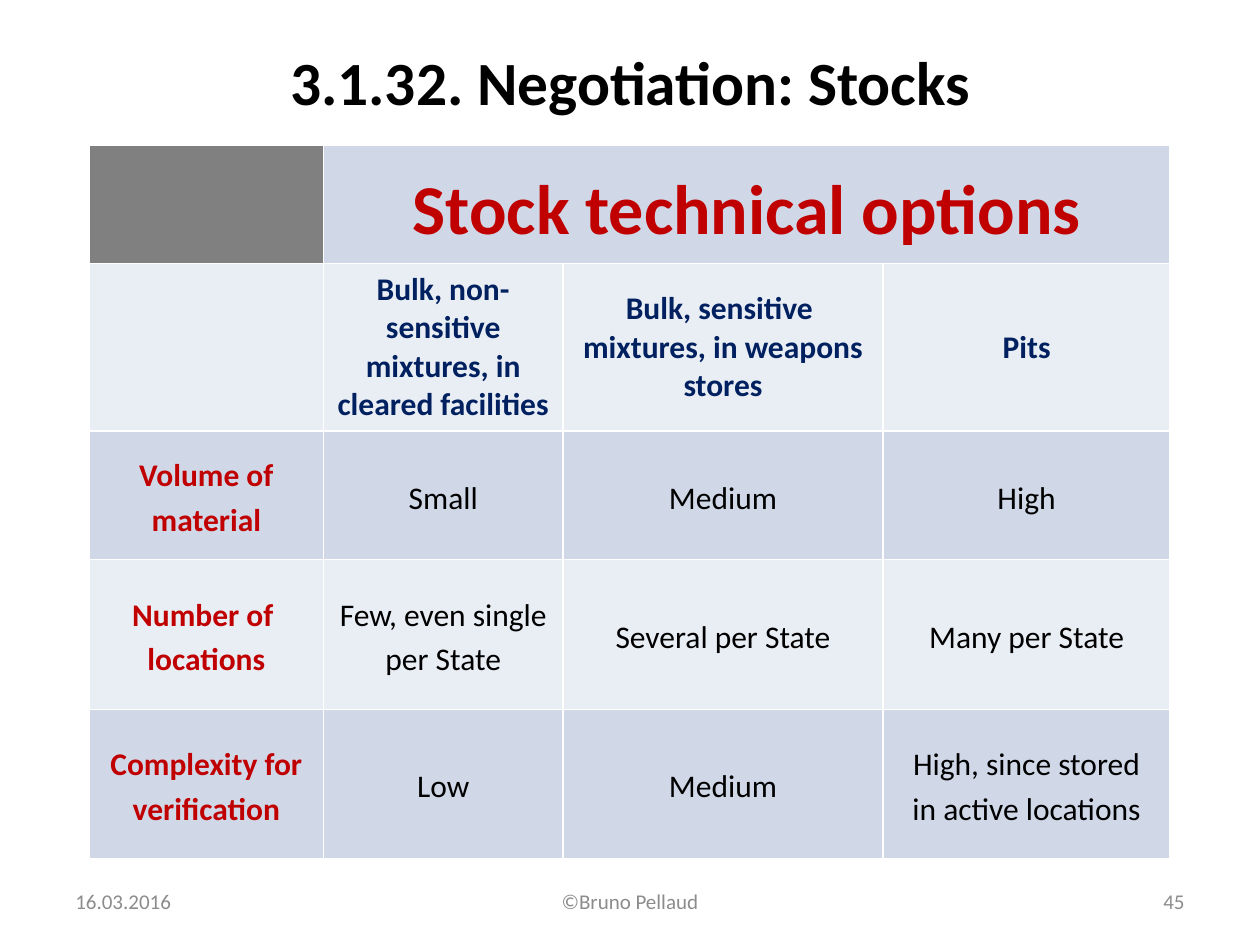
from lxml import etree
from pptx import Presentation
from pptx import util as u
from pptx.dml.color import RGBColor
from pptx.enum import text
from pptx.oxml import ns

ALIGN = text.PP_ALIGN
ANCHOR = text.MSO_ANCHOR


def paint(color_format, color):
    color_format.rgb = RGBColor.from_string(color)


def write(frame, content, size=18, color="000000", bold=False,
          align=ALIGN.CENTER, spacing=None, after=None):
    frame.word_wrap = True
    for index, line in enumerate(content.split("\n")):
        para = frame.paragraphs[0] if index == 0 else frame.add_paragraph()
        para.text = line
        para.alignment = align
        para.line_spacing = spacing
        para.space_after = after
        for span in para.runs:
            span.font.name = "Calibri"
            span.font.size = u.Pt(size)
            span.font.bold = bold
            paint(span.font.color, color)


deck = Presentation()
deck.slide_width = u.Cm(25.4)
deck.slide_height = u.Cm(19.05)
page = deck.slides.add_slide(deck.slide_layouts[6])

column_widths = [4.72, 4.83, 6.45, 5.79]
row_heights = [2.39, 3.38, 2.59, 3.02, 3.02]
rows = [
    ["", "Stock technical options", "", ""],
    ["", "Bulk, non-sensitive mixtures, in cleared facilities",
     "Bulk, sensitive \vmixtures, in weapons stores", "Pits"],
    ["Volume of\nmaterial", "Small", "Medium", "High"],
    ["Number of \nlocations", "Few, even single per State",
     "Several per State", "Many per State"],
    ["Complexity for\nverification", "Low", "Medium",
     "High, since stored\nin active locations"],
]

table = page.shapes.add_table(
    len(rows), len(column_widths), u.Cm(1.8), u.Cm(2.92),
    u.Cm(sum(column_widths)), u.Cm(sum(row_heights))).table
table.first_row = False
table.horz_banding = False
for column, width in zip(table.columns, column_widths):
    column.width = u.Cm(width)
for row, height in zip(table.rows, row_heights):
    row.height = u.Cm(height)
table.cell(0, 1).merge(table.cell(0, 3))

for r, labels in enumerate(rows):
    for c, label in enumerate(labels):
        cell = table.cell(r, c)
        cell.vertical_anchor = ANCHOR.MIDDLE
        cell.margin_left = cell.margin_right = u.Cm(0.18)
        cell.margin_top = cell.margin_bottom = 0
        cell.fill.solid()
        band = "E9EDF4" if r % 2 else "D0D8E8"
        paint(cell.fill.fore_color, "808080" if r == c == 0 else band)

        properties = cell._tc.get_or_add_tcPr()
        for index, side in enumerate(["lnL", "lnR", "lnT", "lnB"]):
            border = etree.Element(ns.qn(f"a:{side}"), w=str(u.Pt(1)))
            fill = etree.SubElement(border, ns.qn("a:solidFill"))
            etree.SubElement(fill, ns.qn("a:srgbClr"), val="FFFFFF")
            properties.insert(index, border)

        if not label:
            continue
        if r == 0:
            style = dict(size=40, color="C00000", bold=True, spacing=1.15)
        elif r == 1:
            style = dict(color="002060", bold=True)
        elif c == 0:
            style = dict(color="C00000", bold=True, spacing=1.15)
        else:
            style = dict(spacing=1.15)
            if c == 3 and r < 4:
                style["after"] = u.Pt(10)
        write(cell.text_frame, label, **style)

title = page.shapes.add_textbox(u.Cm(1.27), u.Cm(0.76), u.Cm(22.86), u.Cm(3.18))
write(title.text_frame, "3.1.32. Negotiation: Stocks", size=35.1, bold=True)

footers = [
    ("16.03.2016", 1.27, 5.92, ALIGN.LEFT),
    ("©Bruno Pellaud", 8.68, 8.04, ALIGN.CENTER),
    ("45", 18.21, 5.92, ALIGN.RIGHT),
]
for content, left, width, align in footers:
    box = page.shapes.add_textbox(u.Cm(left), u.Cm(17.65), u.Cm(width), u.Cm(1.02))
    box.text_frame.vertical_anchor = ANCHOR.MIDDLE
    write(box.text_frame, content, size=12, color="8C8C8C", align=align)

deck.save("out.pptx")
